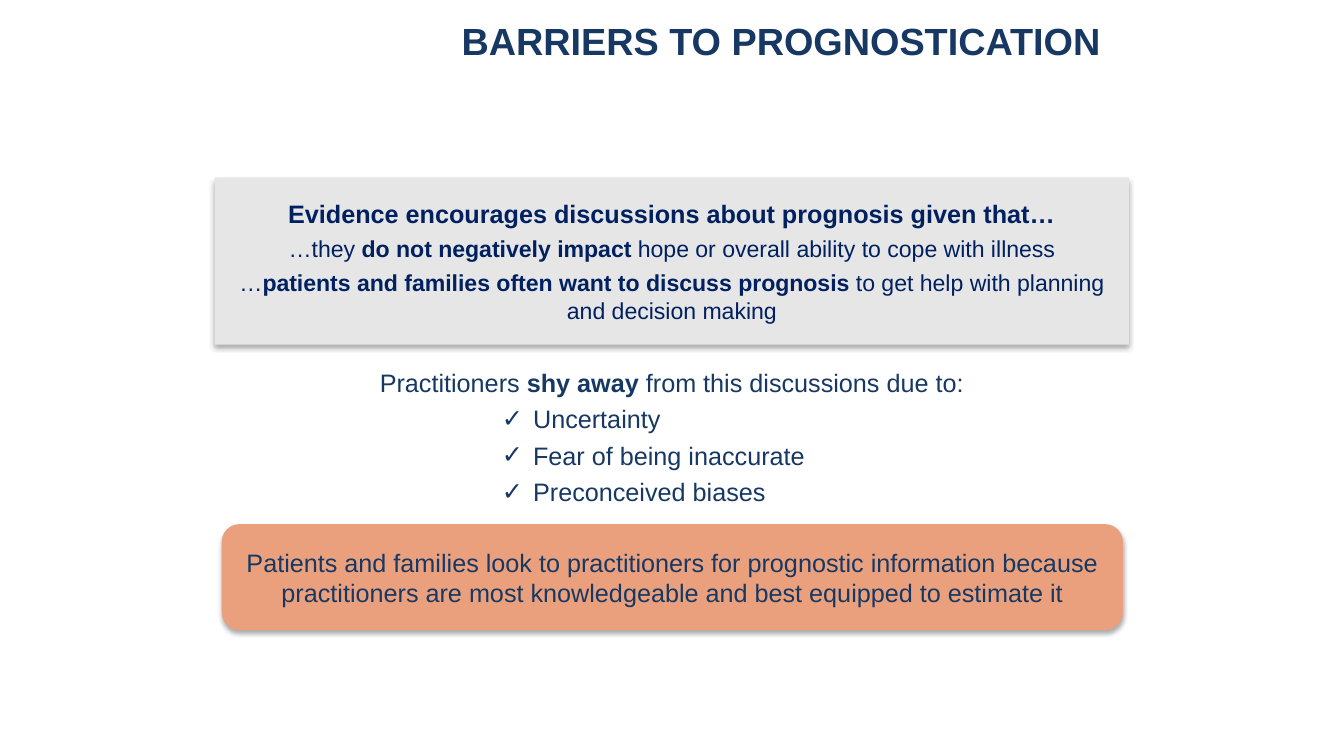
from lxml.etree import SubElement
from pptx import Presentation
from pptx.dml.color import RGBColor
from pptx.enum.shapes import MSO_SHAPE
from pptx.enum.text import MSO_ANCHOR, MSO_AUTO_SIZE, PP_ALIGN
from pptx.oxml.ns import qn
from pptx.util import Pt

NAVY = RGBColor(0x17, 0x38, 0x63)
DARK_BLUE = RGBColor(0x00, 0x20, 0x60)
GREY = RGBColor(0xE7, 0xE6, 0xE6)
ORANGE = RGBColor(0xEA, 0xA0, 0x7D)
FONT = "Arial"
REASONS = ["Uncertainty", "Fear of being inaccurate", "Preconceived biases"]


def format_paragraph(paragraph, size, color, bold=None, align=PP_ALIGN.CENTER):
    paragraph.alignment = align
    paragraph.font.name = FONT
    paragraph.font.size = Pt(size)
    paragraph.font.color.rgb = color
    paragraph.font.bold = bold


def next_paragraph(text_frame):
    """Return the empty first paragraph, or a new one with space before it."""
    if not text_frame.paragraphs[0].runs:
        return text_frame.paragraphs[0]
    paragraph = text_frame.add_paragraph()
    paragraph.space_before = Pt(4.5)
    return paragraph


def add_line(text_frame, parts, size, color):
    """Add a centred paragraph from (text, bold) parts."""
    paragraph = next_paragraph(text_frame)
    for text, bold in parts:
        run = paragraph.add_run()
        run.text = text
        run.font.bold = bold
    format_paragraph(paragraph, size, color)


def add_check_item(text_frame, text):
    paragraph = next_paragraph(text_frame)
    paragraph.add_run().text = text
    paragraph.level = 1
    properties = paragraph._p.get_or_add_pPr()
    properties.set("marL", str(Pt(112.3)))
    properties.set("indent", str(-Pt(22.3)))
    SubElement(properties, qn("a:buFont"), typeface=FONT)
    SubElement(properties, qn("a:buChar"), char="✓")
    format_paragraph(paragraph, 18, NAVY, align=PP_ALIGN.LEFT)


def add_shadow(shape):
    shape.shadow.inherit = False
    effects = shape._element.spPr.find(qn("a:effectLst"))
    shadow = SubElement(effects, qn("a:outerShdw"), blurRad=str(Pt(3.5)),
                        dist=str(Pt(2.2)), dir="5400000", algn="t", rotWithShape="0")
    color = SubElement(shadow, qn("a:srgbClr"), val="000000")
    SubElement(color, qn("a:alpha"), val="32000")


def add_panel(slide, kind, left, top, width, height, fill):
    shape = slide.shapes.add_shape(kind, Pt(left), Pt(top), Pt(width), Pt(height))
    shape.fill.solid()
    shape.fill.fore_color.rgb = fill
    shape.line.fill.background()
    add_shadow(shape)
    shape.text_frame.word_wrap = True
    shape.text_frame.vertical_anchor = MSO_ANCHOR.MIDDLE
    return shape.text_frame


def add_title(slide, text):
    title = slide.shapes.title
    title.left, title.top, title.width, title.height = Pt(282.2), Pt(8.6), Pt(551.5), Pt(44.6)
    title.text_frame.text = text
    title.text_frame.vertical_anchor = MSO_ANCHOR.MIDDLE
    paragraph = title.text_frame.paragraphs[0]
    paragraph.line_spacing = 0.9
    format_paragraph(paragraph, 27, NAVY, bold=True)


def main():
    presentation = Presentation()
    presentation.slide_width, presentation.slide_height = Pt(960), Pt(540)
    slide = presentation.slides.add_slide(presentation.slide_layouts[5])
    add_title(slide, "BARRIERS TO PROGNOSTICATION")

    # Evidence panel
    evidence = add_panel(slide, MSO_SHAPE.RECTANGLE, 153.4, 126.7, 653, 119.5, GREY)
    add_line(evidence, [("Evidence encourages discussions about prognosis given that…", True)],
             18, DARK_BLUE)
    add_line(evidence, [("…they ", False), ("do not negatively impact ", True),
                        ("hope or overall ability to cope with illness", False)],
             16.5, DARK_BLUE)
    add_line(evidence, [("…", False),
                        ("patients and families often want to discuss prognosis ", True),
                        ("to get help with planning and decision making", False)],
             16.5, DARK_BLUE)

    # Reasons for avoiding the discussion
    box = slide.shapes.add_textbox(Pt(261.4), Pt(258.5), Pt(437), Pt(109.4))
    reasons = box.text_frame
    reasons.word_wrap = True
    reasons.auto_size = MSO_AUTO_SIZE.SHAPE_TO_FIT_TEXT
    add_line(reasons, [("Practitioners ", False), ("shy away ", True),
                       ("from this discussions due to:", False)], 18, NAVY)
    for reason in REASONS:
        add_check_item(reasons, reason)

    # Conclusion panel
    conclusion = add_panel(slide, MSO_SHAPE.ROUNDED_RECTANGLE, 158.4, 374.4, 643.7, 75.6, ORANGE)
    add_line(conclusion, [("Patients and families look to practitioners for prognostic "
                           "information because practitioners are most knowledgeable "
                           "and best equipped to estimate it", False)], 18, NAVY)

    presentation.save("out.pptx")


if __name__ == "__main__":
    main()
